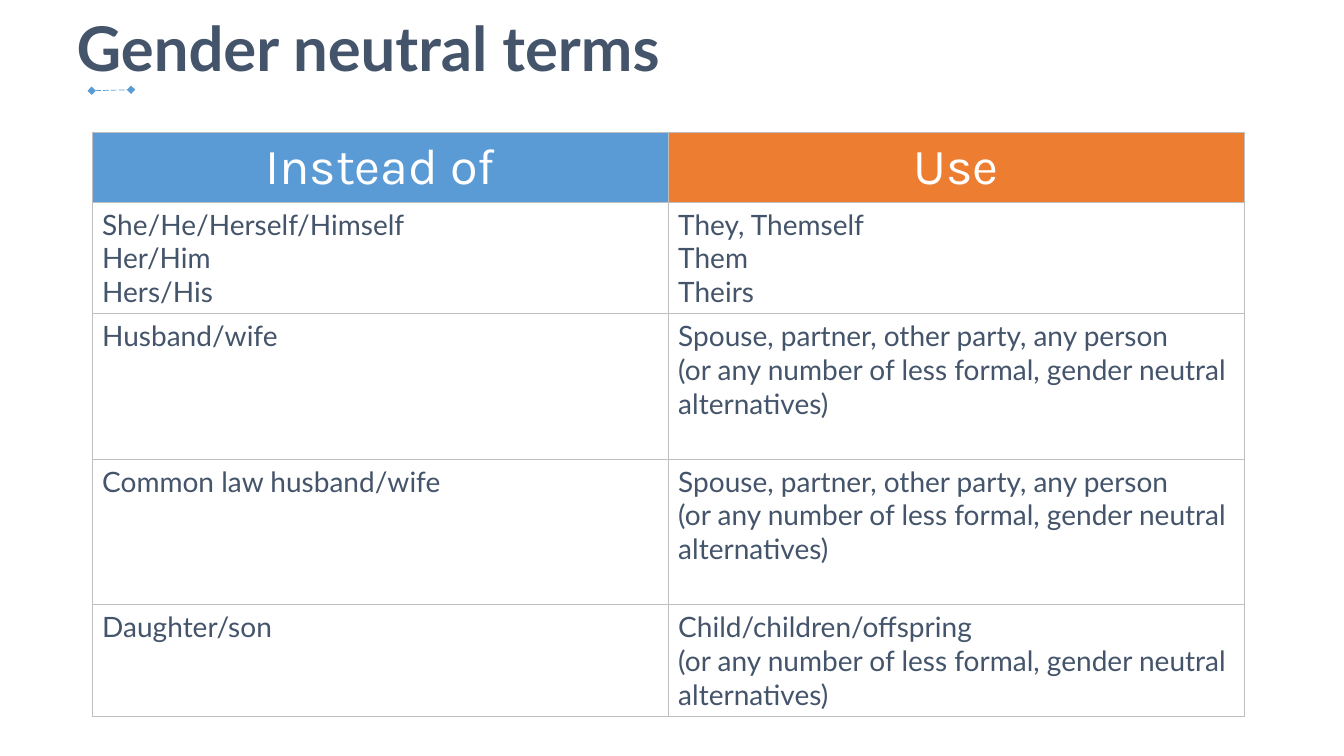
from lxml import etree
from pptx import Presentation
from pptx import util as u
from pptx.dml import color
from pptx.enum import dml, shapes, text
from pptx.oxml import ns

Pt = u.Pt
THEME = {
    "ink": color.RGBColor.from_string("44546A"),
    "white": color.RGBColor.from_string("FFFFFF"),
    "blue": color.RGBColor.from_string("5B9BD5"),
    "orange": color.RGBColor.from_string("ED7D31"),
    "border": "BFBFBF",
    "title": {"size": Pt(44), "name": "Lato", "bold": True},
    "header": {"size": Pt(36), "name": "Karla", "bold": False},
    "body": {"size": Pt(20), "name": "Lato", "bold": False},
}


def write(frame, content, style, ink, alignment):
    """Fill a text frame and format each paragraph's run."""
    frame.text = content
    for paragraph in frame.paragraphs:
        paragraph.alignment = alignment
        font = paragraph.runs[0].font
        for name, value in THEME[style].items():
            setattr(font, name, value)
        font.color.rgb = THEME[ink]


def add_borders(cell):
    """Draw a thin line on all four sides of a cell."""
    properties = cell._tc.get_or_add_tcPr()
    for side in ("lnL", "lnR", "lnT", "lnB"):
        line = etree.SubElement(properties, ns.qn(f"a:{side}"), w=str(Pt(0.75)))
        fill = etree.SubElement(line, ns.qn("a:solidFill"))
        etree.SubElement(fill, ns.qn("a:srgbClr"), val=THEME["border"])


presentation = Presentation()
presentation.slide_width, presentation.slide_height = Pt(960), Pt(540)
slide = presentation.slides.add_slide(presentation.slide_layouts[5])

# Title
title = slide.shapes.title
for name, value in {"left": 47.5, "top": 3.6, "width": 464.4, "height": 60.5}.items():
    setattr(title, name, Pt(value))
write(title.text_frame, "Gender neutral terms", "title", "ink", text.PP_ALIGN.LEFT)
for name, value in {"word_wrap": False, "vertical_anchor": text.MSO_ANCHOR.TOP,
                    "auto_size": text.MSO_AUTO_SIZE.NONE}.items():
    setattr(title.text_frame, name, value)

# Dashed accent under the title
accent = slide.shapes.add_connector(
    shapes.MSO_CONNECTOR.STRAIGHT, Pt(65.5), Pt(64.8), Pt(93.6), Pt(64.1))
accent.line.color.rgb = THEME["blue"]
accent.line.width = Pt(0.5)
accent.line.dash_style = dml.MSO_LINE.LONG_DASH
for end in ("headEnd", "tailEnd"):
    etree.SubElement(accent.line._get_or_add_ln(), ns.qn(f"a:{end}"), type="diamond")
etree.SubElement(accent._element.spPr, ns.qn("a:effectLst"))

# Table of terms
alternatives = "(or any number of less formal, gender neutral alternatives)"
partner = f"Spouse, partner, other party, any person\n{alternatives}"
rows = [
    (50, "Instead of", "Use"),
    (79.2, "She/He/Herself/Himself\nHer/Him\nHers/His", "They, Themself\nThem\nTheirs"),
    (104, "Husband/wife", partner),
    (104, "Common law husband/wife", partner),
    (79.2, "Daughter/son", f"Child/children/offspring\n{alternatives}"),
]
table = slide.shapes.add_table(
    len(rows), 2, Pt(65.8), Pt(94.5), Pt(823), Pt(sum(row[0] for row in rows))).table
table.first_row = table.horz_banding = False
header_format = {
    "vertical_anchor": text.MSO_ANCHOR.MIDDLE,
    "margin_left": Pt(3.6), "margin_right": Pt(3.6),
    "margin_top": Pt(1.44), "margin_bottom": Pt(1.44),
}
for row_index, (height, *terms) in enumerate(rows):
    table.rows[row_index].height = Pt(height)
    for column_index, term in enumerate(terms):
        cell = table.cell(row_index, column_index)
        add_borders(cell)
        if row_index == 0:
            cell.fill.solid()
            cell.fill.fore_color.rgb = THEME[("blue", "orange")[column_index]]
            write(cell.text_frame, term, "header", "white", text.PP_ALIGN.CENTER)
            for name, value in header_format.items():
                setattr(cell, name, value)
        else:
            cell.fill.background()
            write(cell.text_frame, term, "body", "ink", text.PP_ALIGN.LEFT)

presentation.save("out.pptx")
